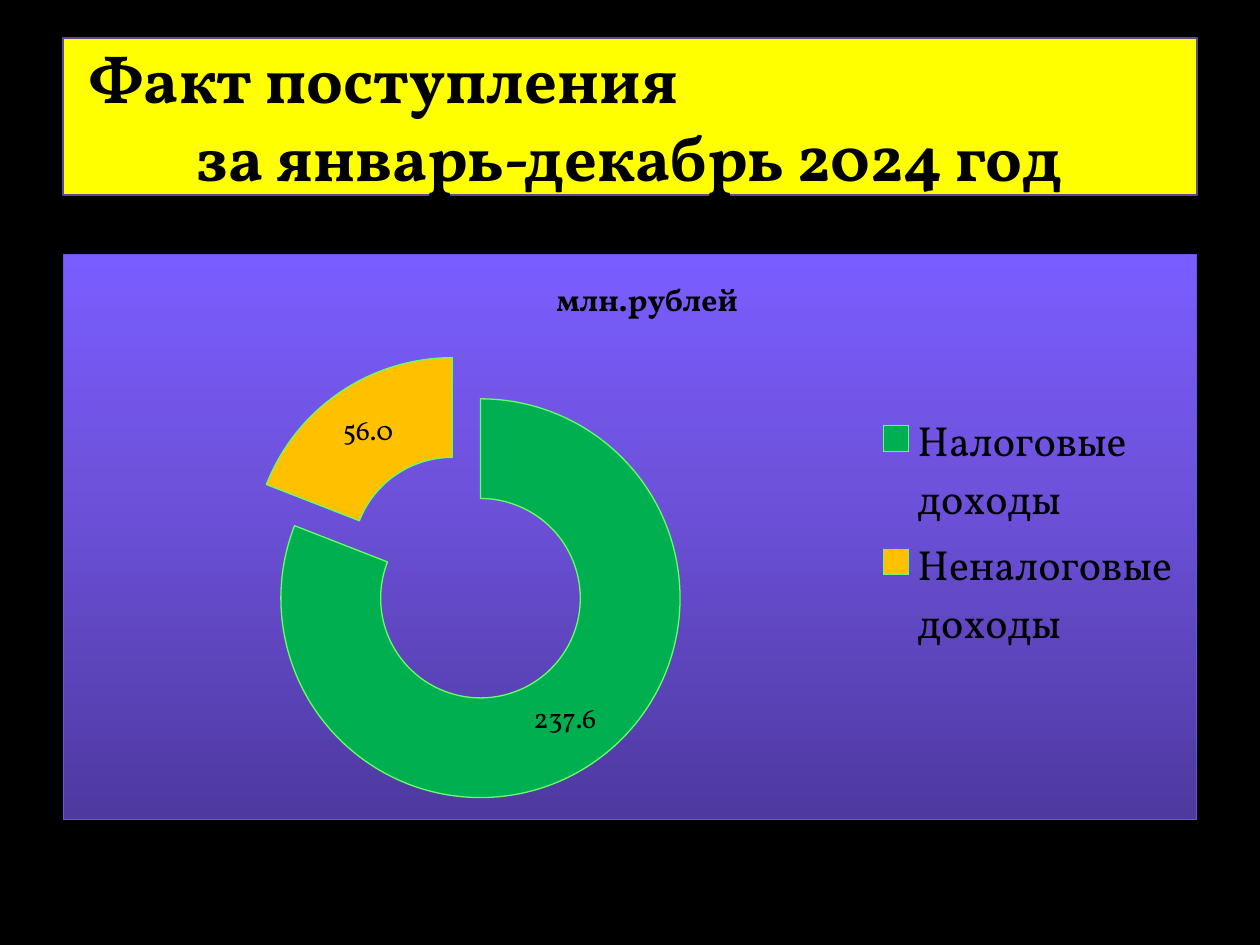
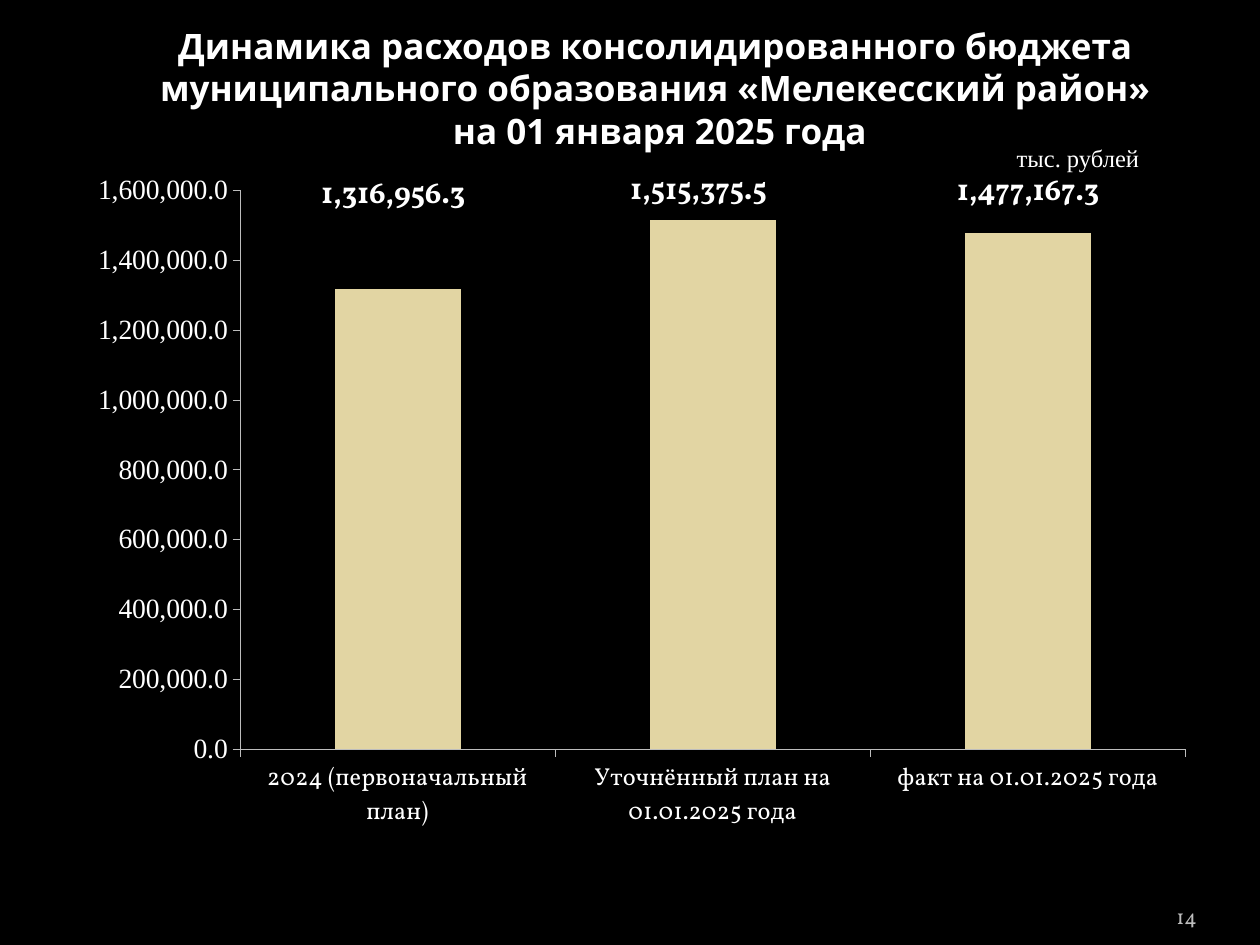
import pptx
import pptx.chart.data
import pptx.dml.color
import pptx.enum.chart
import pptx.enum.text
import pptx.oxml
import pptx.oxml.ns
import pptx.util

EMU_PER_PX = 914400 / 126
PAGE_SIZE = (1260, 945)

COLOURS = {
    "background": "000000",
    "band": "FFFF00",
    "band_line": "5A4A96",
    "dark_text": "000000",
    "light_text": "FFFFFF",
    "muted": "BDBDBD",
    "tax": "00B050",
    "non_tax": "FFC000",
    "ring_line": "66FF66",
    "panel_dark": "4E39A0",
    "panel_mid": "6E52DC",
    "panel_light": "7A5DFF",
    "panel_line": "7053E0",
    "column": "E2D5A3",
}
SERIF = "Vollkorn"
SANS = "Open Sans"
ROMAN = "Times New Roman"
NUMBER_FORMAT = "#,##0.0"

ALIGN = pptx.enum.text.PP_ALIGN
ANCHOR = pptx.enum.text.MSO_ANCHOR
CHART_TYPE = pptx.enum.chart.XL_CHART_TYPE
qn = pptx.oxml.ns.qn


# Shared helpers
def px(length):
    return pptx.util.Emu(round(length * EMU_PER_PX))


def colour(name):
    return pptx.dml.color.RGBColor.from_string(COLOURS[name])


def xml(markup):
    """Parse a fragment that uses the a: and c: prefixes."""
    head, tail = markup.split(">", 1)
    slash = "/" if head.endswith("/") else ""
    declarations = pptx.oxml.ns.nsdecls("a", "c")
    return pptx.oxml.parse_xml(f"{head.rstrip('/')} {declarations}{slash}>{tail}")


def set_font(font, size, colour_name, name=SERIF, bold=False):
    font.size = pptx.util.Pt(size)
    font.name = name
    font.bold = bold
    font.color.rgb = colour(colour_name)


def set_line(line, colour_name, width=0.75):
    line.color.rgb = colour(colour_name)
    line.width = pptx.util.Pt(width)


def fill_text(frame, text, size, colour_name, name=SERIF, bold=False,
              align=ALIGN.CENTER, anchor=ANCHOR.MIDDLE):
    frame.text = text
    frame.word_wrap = True
    frame.auto_size = pptx.enum.text.MSO_AUTO_SIZE.NONE
    frame.vertical_anchor = anchor
    for para in frame.paragraphs:
        para.alignment = align
        for span in para.runs:
            set_font(span.font, size, colour_name, name, bold)


# Kinds of element
def add_title(page, area, text, size, colour_name, name):
    title = page.shapes.title
    title.left, title.top, title.width, title.height = map(px, area)
    fill_text(title.text_frame, text, size, colour_name, name, True)
    return title


def add_label(page, area, text, size, colour_name, name, **layout):
    box = page.shapes.add_textbox(*map(px, area))
    fill_text(box.text_frame, text, size, colour_name, name, **layout)
    return box


def add_chart(page, kind, area, series_name, values):
    data = pptx.chart.data.CategoryChartData(number_format=NUMBER_FORMAT)
    data.categories = list(values)
    data.add_series(series_name, list(values.values()))
    chart = page.shapes.add_chart(kind, *map(px, area), data).chart
    chart.has_legend = False
    chart.has_title = False
    return chart


def show_values(plot, size, colour_name, bold=False):
    plot.has_data_labels = True
    labels = plot.data_labels
    labels.show_value = True
    labels.show_percentage = False
    labels.number_format = NUMBER_FORMAT
    labels.number_format_is_linked = False
    set_font(labels.font, size, colour_name, bold=bold)


def add_gradient_panel(chart):
    stops = "".join(
        f'<a:gs pos="{percent * 1000}"><a:srgbClr val="{COLOURS[name]}"/></a:gs>'
        for percent, name in ((0, "panel_dark"), (60, "panel_mid"), (100, "panel_light")))
    chart.element.find(qn("c:chart")).addnext(xml(
        f'<c:spPr><a:gradFill><a:gsLst>{stops}</a:gsLst>'
        '<a:lin ang="16200000" scaled="0"/></a:gradFill>'
        f'<a:ln w="9525"><a:solidFill><a:srgbClr val="{COLOURS["panel_line"]}"/>'
        '</a:solidFill></a:ln></c:spPr>'))


def manual_layout(target="", mode="", **fractions):
    """Layout element from fractions of the chart size, keyed x, y, w, h."""
    parts = f'<c:layoutTarget val="{target}"/>' if target else ""
    if mode:
        parts += f'<c:xMode val="{mode}"/><c:yMode val="{mode}"/>'
    parts += "".join(f'<c:{key} val="{value:.3f}"/>' for key, value in fractions.items())
    return xml(f"<c:layout><c:manualLayout>{parts}</c:manualLayout></c:layout>")


def replace_layout(parent, layout):
    for old in parent.findall(qn("c:layout")):
        parent.remove(old)
    text = parent.find(qn("c:tx"))
    if text is None:
        parent.insert(0, layout)
    else:
        text.addnext(layout)


def move_label(series, index, shift_x, shift_y, size, colour_name):
    """Shift one value label by fractions of the chart size."""
    set_font(series.points[index].data_label.font, size, colour_name, bold=True)
    label = series.data_labels._element.findall(qn("c:dLbl"))[index]
    position = label.find(qn("c:idx"))
    position.addnext(xml(f'<c:numFmt formatCode="{NUMBER_FORMAT}" sourceLinked="0"/>'))
    position.addnext(manual_layout(x=shift_x, y=shift_y))


def hide_leader_lines(series):
    labels = series.data_labels._element
    for leader in labels.findall(qn("c:showLeaderLines")):
        leader.set("val", "0")
    labels.append(xml(
        '<c:extLst><c:ext uri="{CE6537A1-D6FC-4f65-9D91-7224C49458BB}" '
        'xmlns:c15="http://schemas.microsoft.com/office/drawing/2012/chart">'
        '<c15:showLeaderLines val="0"/></c:ext></c:extLst>'))


def style_axis(axis, size, name):
    axis.has_major_gridlines = False
    axis.major_tick_mark = pptx.enum.chart.XL_TICK_MARK.OUTSIDE
    set_line(axis.format.line, "muted", 0.5)
    set_font(axis.tick_labels.font, size, "light_text", name)


# Slides
def build_revenue(page):
    title = add_title(page, (63, 38, 1134, 157),
                      "Факт поступления\nза январь-декабрь 2024 год",
                      36.9, "dark_text", SERIF)
    title.fill.solid()
    title.fill.fore_color.rgb = colour("band")
    set_line(title.line, "band_line")
    frame = title.text_frame
    frame.margin_left = frame.margin_right = px(25)
    frame.paragraphs[0].alignment = ALIGN.LEFT

    unit = "млн.рублей"
    chart = add_chart(page, CHART_TYPE.DOUGHNUT_EXPLODED, (63, 254, 1134, 566), unit,
                      {"Налоговые доходы": 237.6, "Неналоговые доходы": 56})
    set_font(chart.font, 10, "light_text")
    add_gradient_panel(chart)
    chart.has_title = True
    heading = chart.chart_title.text_frame
    heading.text = unit
    set_font(heading.paragraphs[0].runs[0].font, 18, "dark_text", bold=True)
    replace_layout(chart.element.find(".//" + qn("c:title")),
                   manual_layout(mode="edge", x=0.43, y=0.03))
    chart.has_legend = True
    chart.legend.position = pptx.enum.chart.XL_LEGEND_POSITION.RIGHT
    chart.legend.include_in_layout = False
    set_font(chart.legend.font, 24, "dark_text")

    plot = chart.plots[0]
    plot.vary_by_categories = True
    show_values(plot, 16, "dark_text")
    for index, name in enumerate(("tax", "non_tax")):
        form = plot.series[0].points[index].format
        form.fill.solid()
        form.fill.fore_color.rgb = colour(name)
        set_line(form.line, "ring_line")


def build_spending(page):
    add_title(page, (88, 39, 1144, 98),
              "Динамика расходов консолидированного бюджета \v"
              "муниципального образования «Мелекесский район» \v"
              "на 01 января 2025 года",
              20, "light_text", SANS)

    left, top, width, height = area = (98, 158, 1113, 694)
    spending = {
        "2024 (первоначальный план)": 1316956.3,
        "Уточнённый план на 01.01.2025 года": 1515375.5,
        "факт на 01.01.2025 года": 1477167.3,
    }
    chart = add_chart(page, CHART_TYPE.COLUMN_STACKED, area, "Series 1", spending)
    set_font(chart.font, 17.5, "light_text")
    plot_top, plot_height, axis_top = 0.047, 0.805, 1600000
    replace_layout(chart.element.find(".//" + qn("c:plotArea")),
                   manual_layout("inner", "edge", x=0.119, y=plot_top,
                                 w=0.858, h=plot_height))
    style_axis(chart.category_axis, 14, SERIF)
    amounts = chart.value_axis
    style_axis(amounts, 15.9, ROMAN)
    amounts.minimum_scale, amounts.maximum_scale = 0, axis_top
    amounts.major_unit = 200000
    amounts.tick_labels.number_format = NUMBER_FORMAT
    amounts.tick_labels.number_format_is_linked = False

    plot = chart.plots[0]
    plot.gap_width, plot.overlap = 150, 100
    plot.vary_by_categories = False
    show_values(plot, 17.5, "light_text", bold=True)
    series = plot.series[0]
    series.format.fill.solid()
    series.format.fill.fore_color.rgb = colour("column")

    # Value labels sit above the columns, counted from each column's middle
    label_spots = ((-5, 196), (-15, 192), (0, 193))
    for index, (value, (shift, label_y)) in enumerate(zip(spending.values(), label_spots)):
        middle = plot_top + plot_height * (1 - value / axis_top / 2)
        move_label(series, index, shift / width, (label_y - top) / height - middle,
                   17.5, "light_text")
    hide_leader_lines(series)

    number = add_label(page, (1092, 885, 105, 50), "14", 12, "muted", SERIF,
                       align=ALIGN.RIGHT, anchor=ANCHOR.BOTTOM)
    number.text_frame.margin_left = number.text_frame.margin_right = 0
    add_label(page, (945, 138, 266, 40), "тыс. рублей", 14, "light_text", ROMAN)


def main():
    deck = pptx.Presentation()
    deck.slide_width, deck.slide_height = map(px, PAGE_SIZE)
    backdrop = deck.slide_master.background.fill
    backdrop.solid()
    backdrop.fore_color.rgb = colour("background")
    title_only = deck.slide_layouts[5]
    for build in (build_revenue, build_spending):
        build(deck.slides.add_slide(title_only))
    deck.save("out.pptx")


if __name__ == "__main__":
    main()
